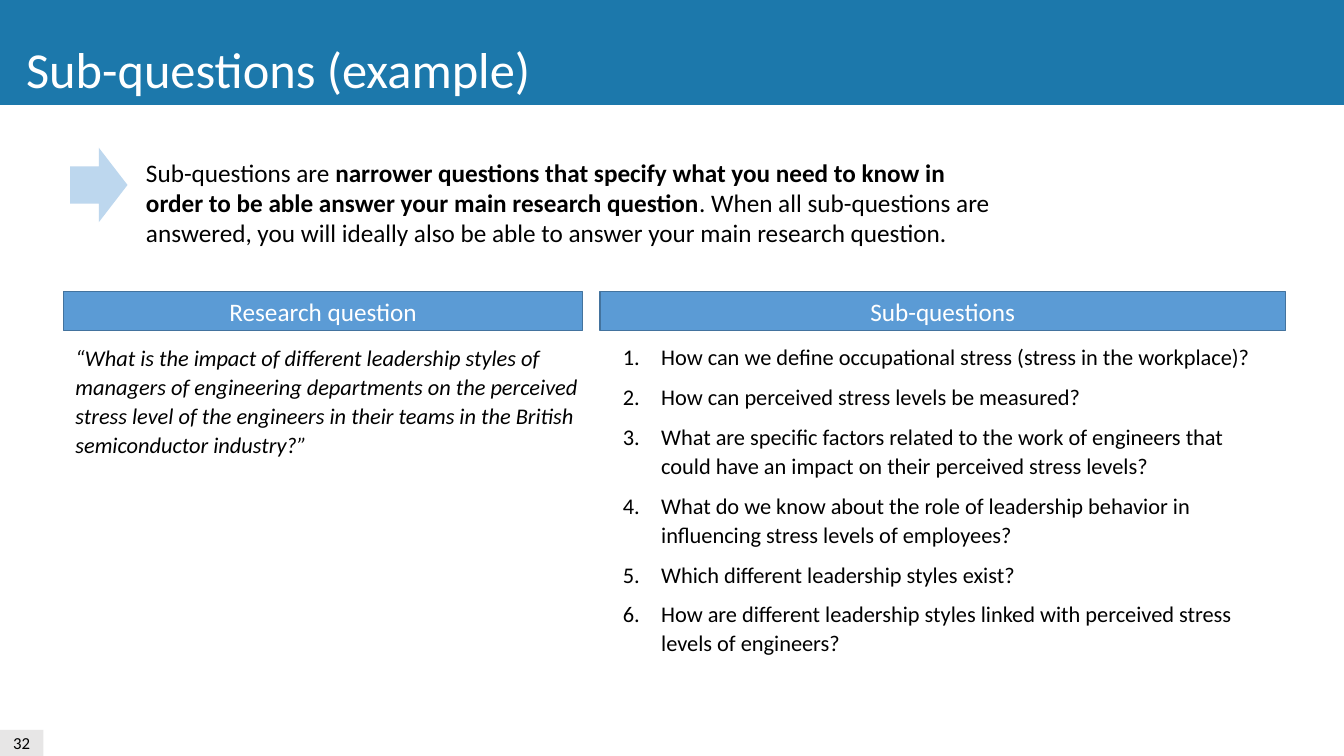
from lxml import etree
from pptx import Presentation
from pptx import util as u
from pptx.dml.color import RGBColor
from pptx.enum import shapes as s, text as t
from pptx.oxml.ns import qn

FONT = "Calibri"
BODY = {"line_spacing": 1.07, "space_after": u.Pt(8)}
STEPS = [
    "How can we define occupational stress (stress in the workplace)?",
    "How can perceived stress levels be measured?",
    "What are specific factors related to the work of engineers that "
    "could have an impact on their perceived stress levels?",
    "What do we know about the role of leadership behavior in "
    "influencing stress levels of employees?",
    "Which different leadership styles exist?",
    "How are different leadership styles linked with perceived stress "
    "levels of engineers?",
]


def color(code):
    return RGBColor.from_string(code)


def inches(box):
    return [u.Inches(n) for n in box]


def style(item, form):
    for name, value in form.items():
        setattr(item, name, value)


def add_run(para, words, size, shade="000000", **form):
    run = para.add_run()
    run.text = words
    style(run.font, {"name": FONT, "size": u.Pt(size), **form})
    run.font.color.rgb = color(shade)


def add_block(slide, kind, box, fill, edge=None):
    block = slide.shapes.add_shape(kind, *inches(box))
    block.shadow.inherit = False
    block.fill.solid()
    block.fill.fore_color.rgb = color(fill)
    if edge:
        block.line.color.rgb = color(edge)
        block.line.width = u.Pt(1)
    else:
        block.line.fill.background()
    return block


def add_label(slide, box, fill, words, size, shade, edge=None):
    block = add_block(slide, s.MSO_SHAPE.RECTANGLE, box, fill, edge)
    block.text_frame.vertical_anchor = t.MSO_ANCHOR.MIDDLE
    para = block.text_frame.paragraphs[0]
    para.alignment = t.PP_ALIGN.CENTER
    add_run(para, words, size, shade)


def add_text(slide, box, wrap=True):
    frame = slide.shapes.add_textbox(*inches(box)).text_frame
    frame.word_wrap = wrap
    frame.auto_size = t.MSO_AUTO_SIZE.SHAPE_TO_FIT_TEXT
    return frame


def indent(para, left, first=0):
    props = para._p.get_or_add_pPr()
    props.set("marL", str(u.Inches(left)))
    props.set("indent", str(u.Inches(first)))
    return props


def add_list(slide, box, items):
    frame = add_text(slide, box)
    for i, words in enumerate(items):
        para = frame.add_paragraph() if i else frame.paragraphs[0]
        style(para, BODY)
        props = indent(para, 0.38, -0.38)
        etree.SubElement(props, qn("a:buFont"), typeface="+mj-lt")
        etree.SubElement(props, qn("a:buAutoNum"), type="arabicPeriod")
        add_run(para, words, 16)


def main():
    deck = Presentation()
    deck.slide_width, deck.slide_height = inches((13.33, 7.5))
    slide = deck.slides.add_slide(deck.slide_layouts[6])

    # Title band
    add_block(slide, s.MSO_SHAPE.RECTANGLE, (0, -0.01, 13.34, 1.05), "1C78AB")
    title = add_text(slide, (0.16, 0.33, 5.25, 0.71), wrap=False)
    add_run(title.paragraphs[0], "Sub-questions (example)", 36, "FFFFFF")

    # Definition with its arrow
    arrow = add_block(slide, s.MSO_SHAPE.DOWN_ARROW,
                      (0.61, 1.55, 0.74, 0.57), "BDD7EE")
    arrow.rotation = 270
    para = add_text(slide, (1.35, 1.51, 8.67, 1.31)).paragraphs[0]
    add_run(para, "Sub-questions are ", 18)
    add_run(para, "narrower questions that specify what you need to know in "
            "order to be able answer your main research question", 18, bold=True)
    add_run(para, ". When all sub-questions are answered, you will ideally "
            "also be able to answer your main research question.", 18)

    # Column heads
    for left, width, words in ((0.63, 5.15, "Research question"),
                               (5.95, 6.8, "Sub-questions")):
        add_label(slide, (left, 2.89, width, 0.39), "5B9BD5", words, 18,
                  "FFFFFF", "43739E")

    # Research question
    para = add_text(slide, (0.16, 3.35, 5.78, 1.24)).paragraphs[0]
    style(para, BODY)
    indent(para, 0.49)
    add_run(para, "“What is the impact of different leadership styles of "
            "managers of engineering departments on the perceived stress "
            "level of the engineers in their teams in the British "
            "semiconductor industry?”", 16, italic=True)

    # Numbered sub-questions
    add_list(slide, (6.08, 3.34, 6.67, 3.24), STEPS)

    # Page number
    add_label(slide, (0, 7.24, 0.43, 0.26), "E7E6E6", "32", 12, "000000")

    deck.save("out.pptx")


if __name__ == "__main__":
    main()
